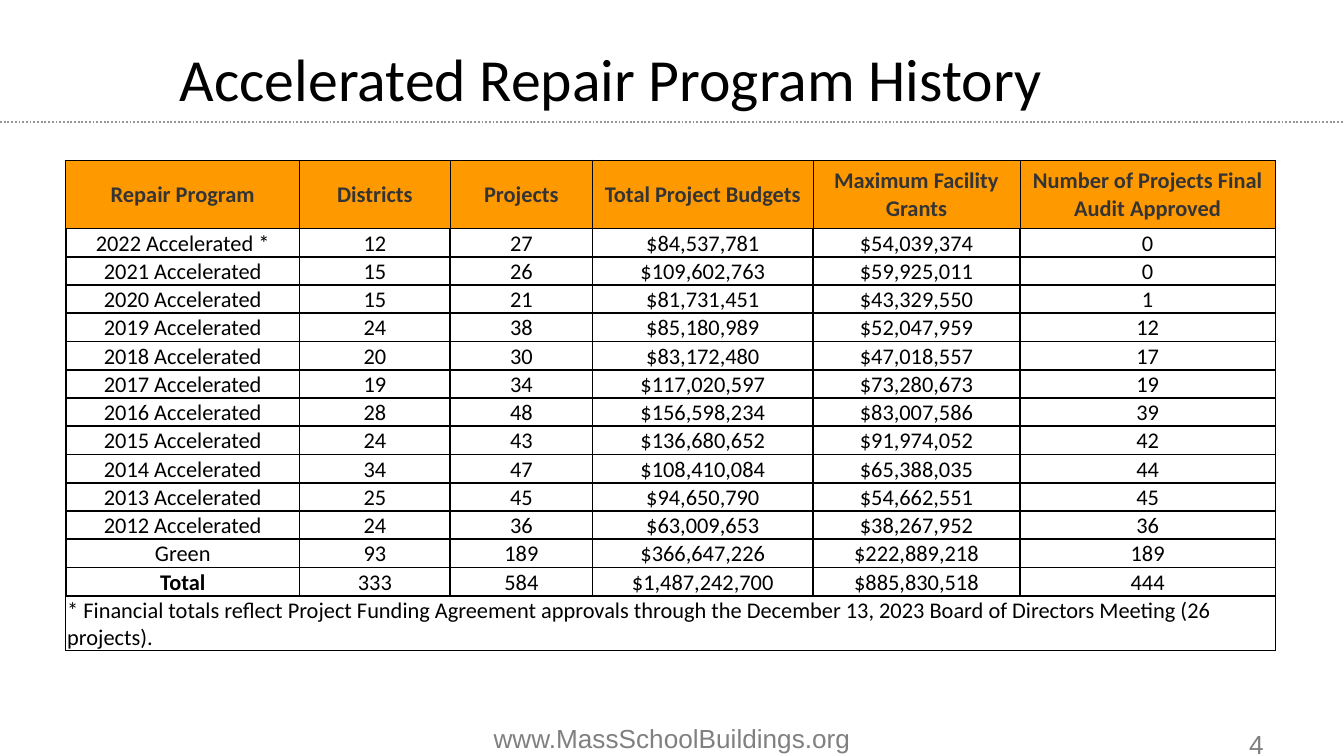
from lxml import etree
from pptx import Presentation, util as u
from pptx.dml.color import RGBColor
from pptx.enum import dml, shapes, text
from pptx.oxml import parse_xml
from pptx.oxml.ns import nsdecls, qn

Pt = u.Pt
MIDDLE, BOTTOM = text.MSO_ANCHOR.MIDDLE, text.MSO_ANCHOR.BOTTOM
LEFT, CENTER, RIGHT = text.PP_ALIGN.LEFT, text.PP_ALIGN.CENTER, text.PP_ALIGN.RIGHT

HEADINGS = ["Repair Program", "Districts", "Projects", "Total Project Budgets",
            "Maximum Facility Grants", "Number of Projects Final Audit Approved"]
PROGRAMS = [
    ("2022 Accelerated *", "12", "27", "$84,537,781", "$54,039,374", "0"),
    ("2021 Accelerated", "15", "26", "$109,602,763", "$59,925,011", "0"),
    ("2020 Accelerated", "15", "21", "$81,731,451", "$43,329,550", "1"),
    ("2019 Accelerated", "24", "38", "$85,180,989", "$52,047,959", "12"),
    ("2018 Accelerated", "20", "30", "$83,172,480", "$47,018,557", "17"),
    ("2017 Accelerated", "19", "34", "$117,020,597", "$73,280,673", "19"),
    ("2016 Accelerated", "28", "48", "$156,598,234", "$83,007,586", "39"),
    ("2015 Accelerated", "24", "43", "$136,680,652", "$91,974,052", "42"),
    ("2014 Accelerated", "34", "47", "$108,410,084", "$65,388,035", "44"),
    ("2013 Accelerated", "25", "45", "$94,650,790", "$54,662,551", "45"),
    ("2012 Accelerated", "24", "36", "$63,009,653", "$38,267,952", "36"),
    ("Green", "93", "189", "$366,647,226", "$222,889,218", "189"),
    ("Total", "333", "584", "$1,487,242,700", "$885,830,518", "444"),
]
FOOTNOTE = ("* Financial totals reflect Project Funding Agreement approvals through "
            "the December 13, 2023 Board of Directors Meeting (26 projects).")
COLUMN_WIDTHS = [125.28, 80.64, 76.32, 118.08, 110.88, 136.8]
ROW_HEIGHTS = [36.72, 12.24] + [13.68] * 12 + [19.44]


def color(hex_code):
    """Return the colour for a hex string."""
    return RGBColor.from_string(hex_code)


def style(paragraph, font, size, hex_code, align, bold=False):
    """Set the alignment and font of a paragraph."""
    paragraph.alignment = align
    paragraph.font.name = font
    paragraph.font.size = Pt(size)
    paragraph.font.bold = bold
    paragraph.font.color.rgb = color(hex_code)


def add_label(slide, box, words, font, size, hex_code, align=LEFT, anchor=text.MSO_ANCHOR.TOP):
    """Place one line of text in the given box."""
    frame = slide.shapes.add_textbox(*map(Pt, box)).text_frame
    frame.word_wrap = True
    frame.vertical_anchor = anchor
    frame.text = words
    style(frame.paragraphs[0], font, size, hex_code, align)


def add_header(slide, left, top, width):
    """Place the title above a dotted rule that spans the width."""
    rule_y = Pt(top + 65.52)
    rule = slide.shapes.add_connector(
        shapes.MSO_CONNECTOR.STRAIGHT, Pt(left), rule_y, Pt(left + width), rule_y)
    rule.line.color.rgb = color("969696")
    rule.line.width = Pt(1)
    rule.line.dash_style = dml.MSO_LINE.ROUND_DOT
    etree.SubElement(rule._element.spPr, qn("a:effectLst"))
    add_label(slide, (left + 89.28, top + 18.72, 620.64, 46.08),
              "Accelerated Repair Program History", "Calibri", 32, "000000")


def add_footer(slide, left, top, height):
    """Place the web address and the page number."""
    add_label(slide, (left + 240, top, 240, height), "www.MassSchoolBuildings.org",
              "Arial", 14, "808080", CENTER, MIDDLE)
    add_label(slide, (left + 516, top, 168, height), "4", "Arial", 14, "7F7F7F", RIGHT)


def add_borders(cell, widths):
    """Draw black left, right, top and bottom borders of the given widths."""
    properties = cell._tc.get_or_add_tcPr()
    for index, (side, width) in enumerate(zip("LRTB", widths)):
        properties.insert(index, parse_xml(
            f'<a:ln{side} {nsdecls("a")} w="{Pt(width)}"><a:solidFill>'
            f'<a:srgbClr val="000000"/></a:solidFill></a:ln{side}>'))


def fill_cell(cell, words, fill="FFFFFF", ink="000000", bold=False,
              align=CENTER, anchor=MIDDLE, borders=(1, 1, 1, 1)):
    """Write and format one table cell."""
    cell.text = words
    cell.vertical_anchor = anchor
    cell.margin_left = cell.margin_right = cell.margin_top = Pt(0.72)
    cell.margin_bottom = 0
    style(cell.text_frame.paragraphs[0], "Calibri", 12, ink, align, bold)
    cell.fill.solid()
    cell.fill.fore_color.rgb = color(fill)
    add_borders(cell, borders)


def add_history(slide, left, top):
    """Place the table of programs with its footnote row."""
    table = slide.shapes.add_table(
        len(ROW_HEIGHTS), len(COLUMN_WIDTHS), Pt(left), Pt(top),
        Pt(sum(COLUMN_WIDTHS)), Pt(sum(ROW_HEIGHTS))).table
    for column, width in zip(table.columns, COLUMN_WIDTHS):
        column.width = Pt(width)
    for row, height in zip(table.rows, ROW_HEIGHTS):
        row.height = Pt(height)
    for cell, heading in zip(table.rows[0].cells, HEADINGS):
        fill_cell(cell, heading, "FF9900", "353434", True, borders=(0.5, 0.5, 0.5, 1))
    for r, program in enumerate(PROGRAMS, 1):
        for c, value in enumerate(program):
            fill_cell(table.cell(r, c), value, bold=value == "Total")
    last = len(ROW_HEIGHTS) - 1
    for cell in table.rows[last].cells:
        fill_cell(cell, "", align=LEFT, anchor=BOTTOM, borders=(0.5, 0.5, 1, 0.5))
    note = table.cell(last, 0)
    note.merge(table.cell(last, len(COLUMN_WIDTHS) - 1))
    note.text_frame.paragraphs[0].add_run().text = FOOTNOTE


def main():
    """Build the slide and save it."""
    deck = Presentation()
    deck.slide_width, deck.slide_height = Pt(720), Pt(405)
    slide = deck.slides.add_slide(deck.slide_layouts[6])
    add_header(slide, 0, 0, 720)
    add_footer(slide, 0, 386.64, 18)
    add_history(slide, 35.28, 85.68)
    deck.save("out.pptx")


if __name__ == "__main__":
    main()
